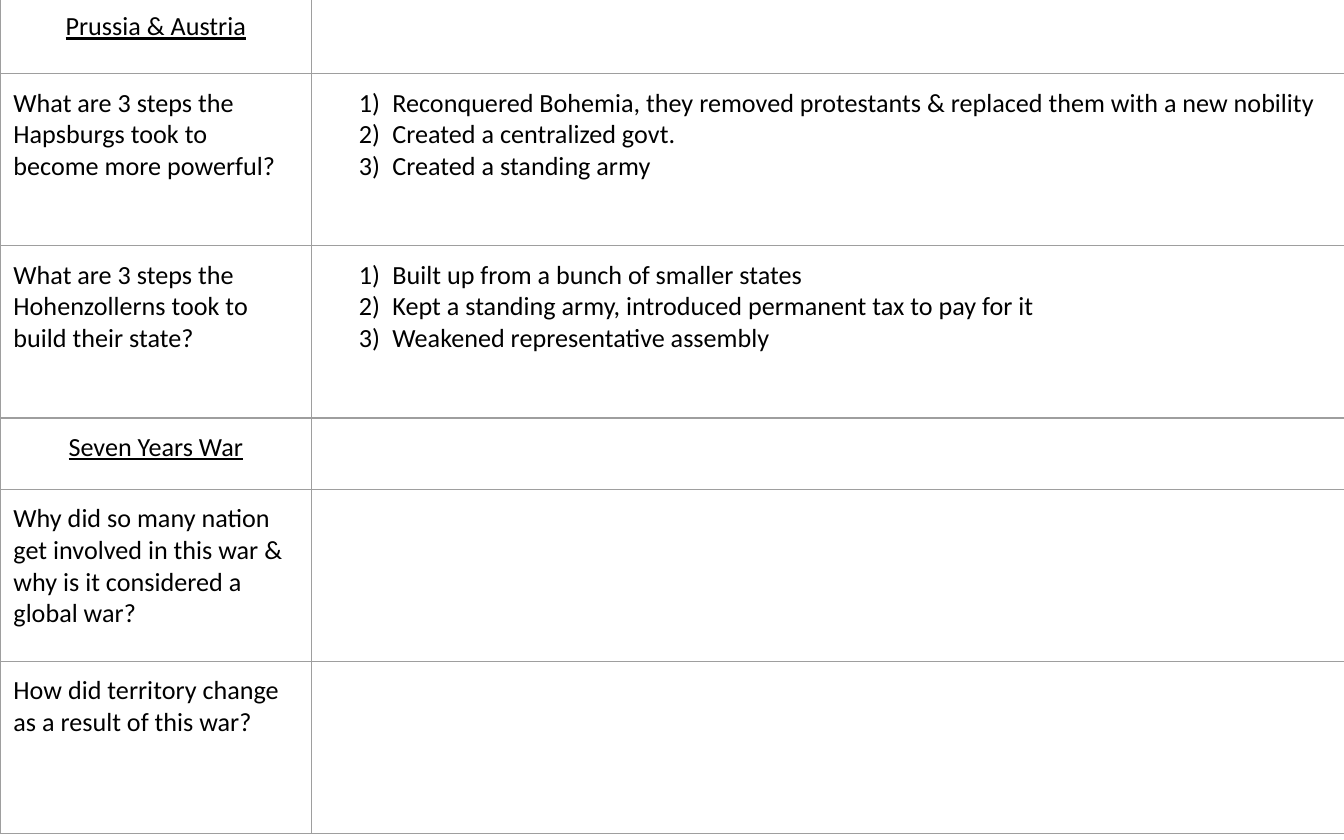
"""Build a study-guide table on Prussia, Austria and the Seven Years War."""
from lxml import etree
from pptx import Presentation
from pptx.dml.color import RGBColor
from pptx.enum.text import PP_ALIGN
from pptx.oxml.ns import qn
from pptx.util import Pt

CENTER, LEFT = PP_ALIGN.CENTER, PP_ALIGN.LEFT
COLORS = {"text": "000000", "border": "9E9E9E"}
FONT, FONT_SIZE = "Calibri", 14
INSET, INDENT, HANGING = 7.2, 36, 18
BORDER_WIDTH = 0.75
TABLE_TOP = -1.44
COLUMN_WIDTHS = (167.04, 554.4)
HEADING, QUESTION = "heading", "question"
ROWS = [
    (HEADING, 41.04, "Prussia & Austria", []),
    (QUESTION, 92.16, "What are 3 steps the Hapsburgs took to become more powerful?", [
        "Reconquered Bohemia, they removed protestants & replaced them with a new nobility",
        "Created a centralized govt.",
        "Created a standing army",
    ]),
    (QUESTION, 92.16, "What are 3 steps the Hohenzollerns took to build their state?", [
        "Built up from a bunch of smaller states",
        "Kept a standing army, introduced permanent tax to pay for it",
        "Weakened representative assembly",
    ]),
    (HEADING, 38.16, "Seven Years War", []),
    (QUESTION, 92.16, "Why did so many nation get involved in this war & "
                      "why is it considered a global war?", []),
    (QUESTION, 92.16, "How did territory change as a result of this war?", []),
]


def format_cell(cell):
    """Give a cell its insets, grey borders and empty fill."""
    cell.margin_left = cell.margin_right = Pt(INSET)
    cell.margin_top = cell.margin_bottom = Pt(INSET)
    properties = cell._tc.get_or_add_tcPr()
    for side in ("lnL", "lnR", "lnT", "lnB"):
        line = etree.SubElement(properties, qn(f"a:{side}"), w=str(Pt(BORDER_WIDTH)))
        fill = etree.SubElement(line, qn("a:solidFill"))
        etree.SubElement(fill, qn("a:srgbClr"), val=COLORS["border"])
    cell.fill.background()


def write_cell(cell, lines, heading=False, numbered=False):
    """Write the lines of a cell as formatted paragraphs."""
    cell.text_frame.text = "\n".join(lines)
    for para in cell.text_frame.paragraphs:
        para.alignment = CENTER if heading else LEFT
        para.font.size = Pt(FONT_SIZE)
        if numbered:
            properties = para._p.get_or_add_pPr()
            properties.set("marL", str(Pt(INDENT)))
            properties.set("indent", str(Pt(-HANGING)))
            number = etree.Element(qn("a:buAutoNum"), type="arabicParenR")
            properties.insert(0, number)
        for span in para.runs:
            span.font.name = FONT
            span.font.size = Pt(FONT_SIZE)
            span.font.underline = heading
            span.font.color.rgb = RGBColor.from_string(COLORS["text"])


def main():
    """Create the deck and save it."""
    deck = Presentation()
    deck.slide_width, deck.slide_height = Pt(720), Pt(450)
    page = deck.slides.add_slide(deck.slide_layouts[6])
    table = page.shapes.add_table(
        len(ROWS), len(COLUMN_WIDTHS), Pt(0), Pt(TABLE_TOP),
        Pt(sum(COLUMN_WIDTHS)), Pt(sum(row[1] for row in ROWS))).table
    table.first_row = table.horz_banding = False
    for column, width in zip(table.columns, COLUMN_WIDTHS):
        column.width = Pt(width)
    for index, (kind, height, prompt, answers) in enumerate(ROWS):
        table.rows[index].height = Pt(height)
        write_cell(table.cell(index, 0), [prompt], heading=kind == HEADING)
        write_cell(table.cell(index, 1), answers, numbered=bool(answers))
    for cell in table.iter_cells():
        format_cell(cell)
    deck.save("out.pptx")


if __name__ == "__main__":
    main()
